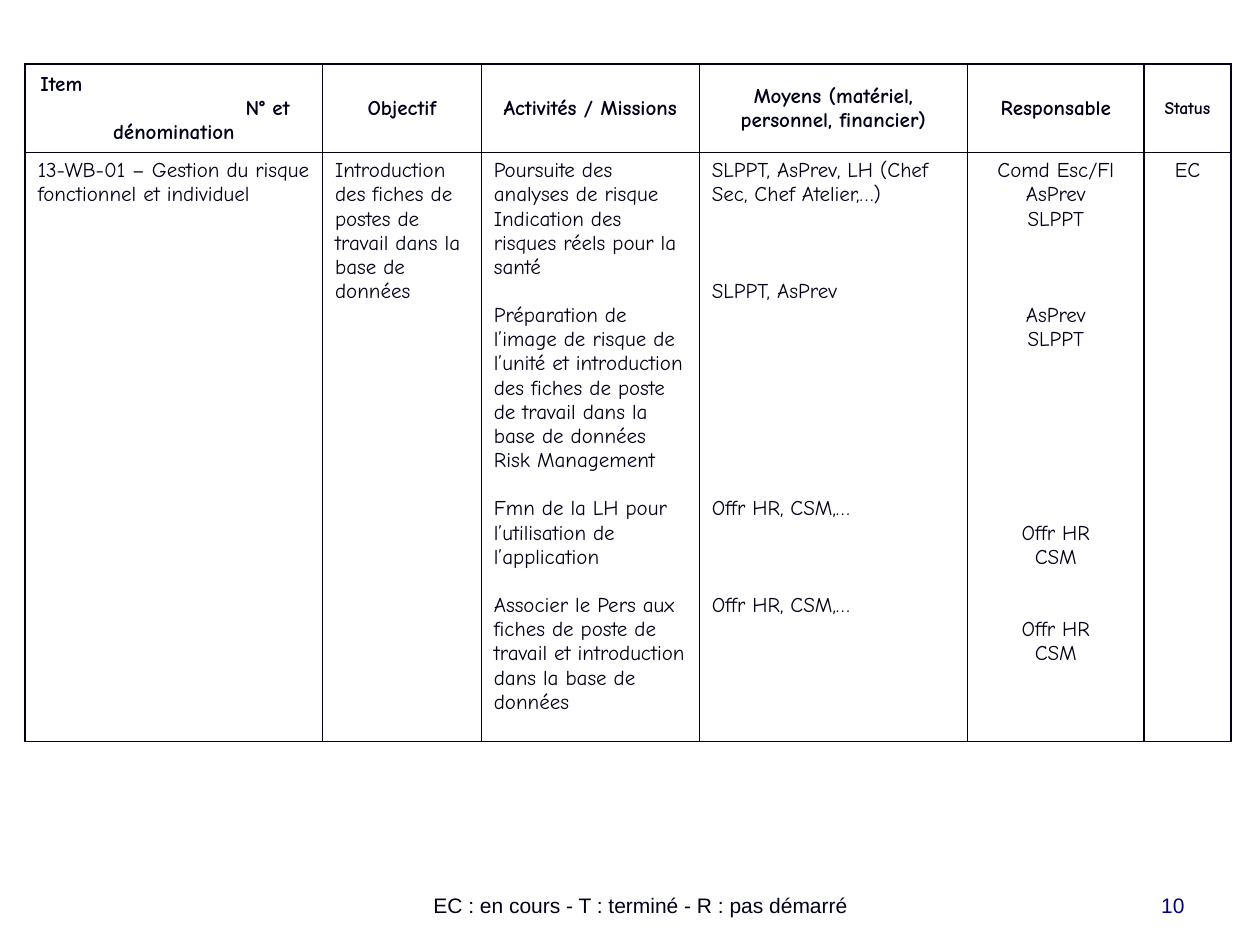
from lxml import etree
from pptx import Presentation
from pptx import util as u
from pptx.dml.color import RGBColor
from pptx.enum import text
from pptx.oxml import ns

INK = RGBColor(0x00, 0x00, 0x18)
NAVY = RGBColor(0x00, 0x00, 0x80)
LEFT, CENTER, RIGHT = text.PP_ALIGN.LEFT, text.PP_ALIGN.CENTER, text.PP_ALIGN.RIGHT
LINE_HEIGHT = 13.8

COLUMN_WIDTHS = [2.36, 1.26, 1.73, 2.13, 1.4, 0.69]
ROW_HEIGHTS = [0.68, 4.51]
HEADERS = [
    "Objectif",
    "Activités / Missions",
    "Moyens (matériel, personnel, financier)",
    "Responsable",
    "Status",
]
ITEM_HEADER = [("Item", LEFT, 0.02), ("N° et", LEFT, 1.65), ("dénomination", CENTER, 0)]
BODY = [
    (LEFT, [(0, "13-WB-01 – Gestion du risque fonctionnel et individuel")]),
    (LEFT, [(0, "Introduction des fiches de postes de travail dans la base de données")]),
    (LEFT, [
        (0, "Poursuite des analyses de risque Indication des risques réels pour la santé"),
        (1, "Préparation de l’image de risque de l’unité et introduction des fiches "
            "de poste de travail dans la base de données Risk Management"),
        (1, "Fmn de la LH pour l’utilisation de l’application"),
        (1, "Associer le Pers aux fiches de poste de travail et introduction "
            "dans la base de données"),
    ]),
    (LEFT, [
        (0, "SLPPT, AsPrev, LH (Chef Sec, Chef Atelier,…)"),
        (3, "SLPPT, AsPrev"),
        (8, "Offr HR, CSM,…"),
        (3, "Offr HR, CSM,…"),
    ]),
    (CENTER, [
        (0, "Comd Esc/Fl"), (0, "AsPrev"), (0, "SLPPT"),
        (3, "AsPrev"), (0, "SLPPT"),
        (7, "Offr HR"), (0, "CSM"),
        (2, "Offr HR"), (0, "CSM"),
    ]),
    (CENTER, [(0, "EC")]),
]


class ActionPlanSlide:
    table_font = "Comic Neue"
    footer_font = "Arial"
    size = 12

    def __init__(self, presentation):
        self.slide = presentation.slides.add_slide(presentation.slide_layouts[6])

    def paragraph(self, frame, index, content, align, font, color=INK,
                  bold=False, size=size, gap=0, indent=0):
        paragraph = frame.paragraphs[0] if index == 0 else frame.add_paragraph()
        paragraph.text = content
        paragraph.alignment = align
        if gap:
            paragraph.space_before = u.Pt(gap * LINE_HEIGHT)
        if indent:
            paragraph._p.get_or_add_pPr().set("marL", str(u.Inches(indent)))
        paragraph.font.name = font
        paragraph.font.size = u.Pt(size)
        paragraph.font.bold = bold
        paragraph.font.color.rgb = color

    def footer(self, content, left, width, align, color):
        box = self.slide.shapes.add_textbox(
            u.Inches(left), u.Inches(6.83), u.Inches(width), u.Inches(0.5))
        frame = box.text_frame
        frame.word_wrap = True
        frame.vertical_anchor = text.MSO_ANCHOR.BOTTOM
        self.paragraph(frame, 0, content, align, self.footer_font, color)

    def border(self, cell):
        properties = cell._tc.get_or_add_tcPr()
        for position, side in enumerate(("lnL", "lnR", "lnT", "lnB")):
            line = etree.Element(ns.qn(f"a:{side}"), w=str(u.Pt(1)))
            fill = etree.SubElement(line, ns.qn("a:solidFill"))
            etree.SubElement(fill, ns.qn("a:srgbClr"), val=str(INK))
            properties.insert(position, line)

    def table(self, left, top):
        frame = self.slide.shapes.add_table(
            len(ROW_HEIGHTS), len(COLUMN_WIDTHS), u.Inches(left), u.Inches(top),
            u.Inches(sum(COLUMN_WIDTHS)), u.Inches(sum(ROW_HEIGHTS)))
        table = frame.table
        table.first_row = table.horz_banding = False
        for column, width in zip(table.columns, COLUMN_WIDTHS):
            column.width = u.Inches(width)
        for row, height in zip(table.rows, ROW_HEIGHTS):
            row.height = u.Inches(height)
        for cell in table.iter_cells():
            cell.fill.background()
            self.border(cell)
        return table

    def header_cell(self, cell, lines, size=size):
        cell.vertical_anchor = text.MSO_ANCHOR.MIDDLE
        for index, (content, align, indent) in enumerate(lines):
            self.paragraph(cell.text_frame, index, content, align, self.table_font,
                           bold=True, size=size, indent=indent)

    def body_cell(self, cell, align, entries):
        for index, (gap, content) in enumerate(entries):
            self.paragraph(cell.text_frame, index, content, align,
                           self.table_font, gap=gap)


def main():
    presentation = Presentation()
    presentation.slide_width = u.Inches(10)
    presentation.slide_height = u.Inches(7.5)
    plan = ActionPlanSlide(presentation)

    plan.footer("EC : en cours - T : terminé - R : pas démarré", 2.33, 5.51, CENTER, INK)
    table = plan.table(0.2, 0.51)
    plan.header_cell(table.cell(0, 0), ITEM_HEADER)
    for column, title in enumerate(HEADERS, start=1):
        plan.header_cell(table.cell(0, column), [(title, CENTER, 0)],
                         size=10 if title == "Status" else 12)
    for column, (align, entries) in enumerate(BODY):
        plan.body_cell(table.cell(1, column), align, entries)
    plan.footer("10", 7.17, 2.33, RIGHT, NAVY)

    presentation.save("out.pptx")


if __name__ == "__main__":
    main()
